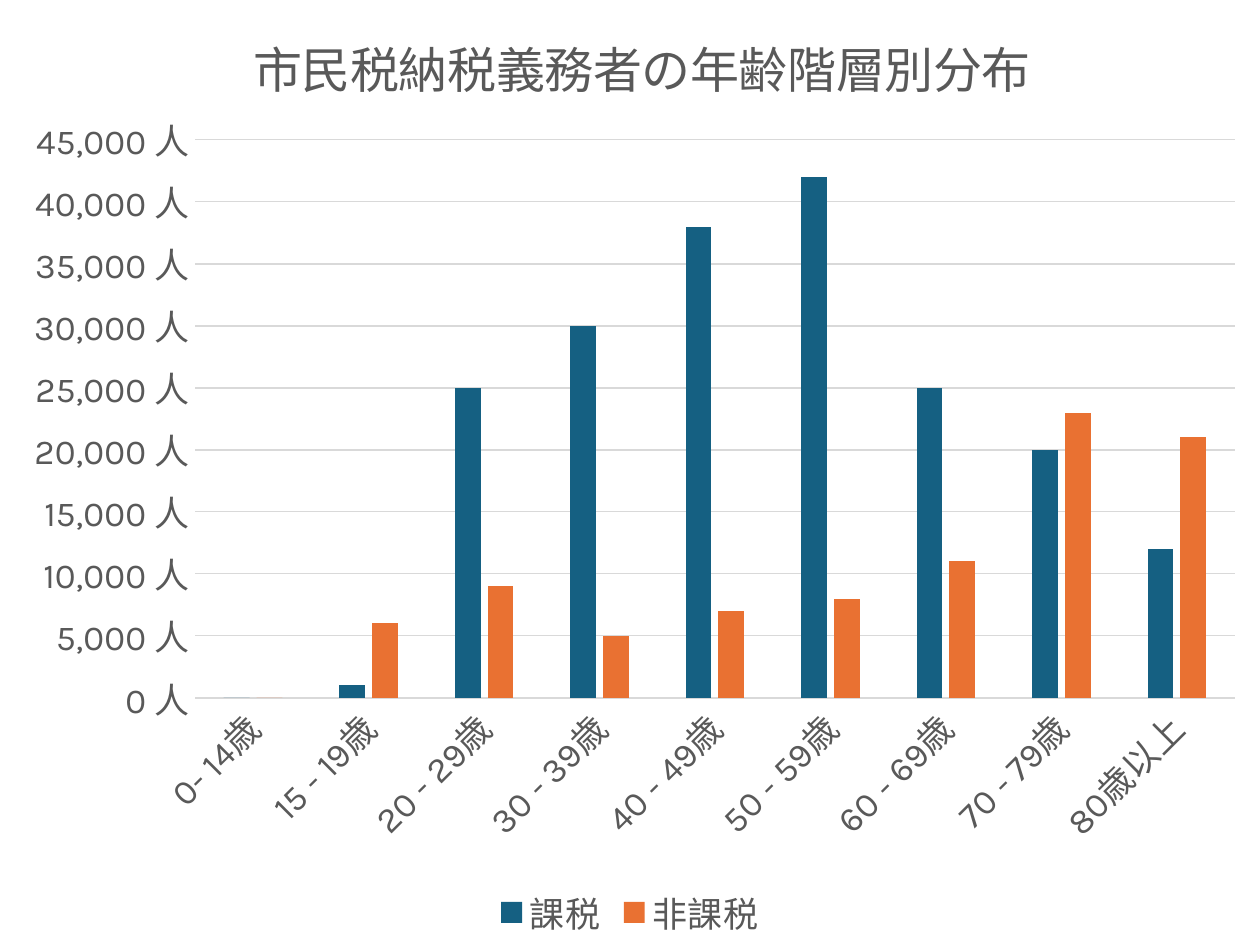
from lxml import etree
from pptx import Presentation
from pptx.chart.data import CategoryChartData as Data
from pptx.dml.color import RGBColor as RGB
from pptx.enum.chart import XL_CHART_TYPE as Kind
from pptx.enum.chart import XL_LEGEND_POSITION as Side
from pptx.enum.chart import XL_TICK_MARK as Tick
from pptx.oxml.ns import qn
from pptx.util import Inches, Pt

# Content
TITLE = "市民税納税義務者の年齢階層別分布"
AGES = ["0- 14歳", "15 - 19歳", "20 - 29歳", "30 - 39歳", "40 - 49歳",
        "50 - 59歳", "60 - 69歳", "70 - 79歳", "80歳以上"]
TAX = [
    ("課税", [0, 1000, 25000, 30000, 38000, 42000, 25000, 20000, 12000], "blue"),
    ("非課税", [0, 6000, 9000, 5000, 7000, 8000, 11000, 23000, 21000], "orange"),
]
UNIT = '#,##0_ "人"'

# Theme and format values
THEME = {
    "font": "Karla", "title": 28, "label": 20, "line": 0.75,
    "text": RGB.from_string("595959"), "grid": RGB.from_string("D9D9D9"),
    "blue": RGB.from_string("156082"), "orange": RGB.from_string("E97132"),
}
WIDE, HIGH = 10, 7.61
HEAD = {"x": 1.94, "y": 0.25}
AREA = {"x": 1.55, "y": 1.22, "w": 8.25, "h": 4.43}
SCALE = {"minimum_scale": 0, "maximum_scale": 45000, "major_unit": 5000,
         "has_major_gridlines": True}
TICKS = {"major_tick_mark": Tick.NONE, "minor_tick_mark": Tick.NONE}
BARS = {"gap_width": 219, "overlap": -27, "vary_by_categories": False}
KEY = {"position": Side.BOTTOM, "include_in_layout": False}


def put(part, vals):
    for name, val in vals.items():
        setattr(part, name, val)


def ink(font, size):
    put(font, {"name": THEME["font"], "size": Pt(size), "bold": False})
    font.color.rgb = THEME["text"]


def rule(line):
    line.color.rgb = THEME["grid"]
    line.width = Pt(THEME["line"])


def place(part, box, spot, modes):
    """Fix a chart part at a box given in inches within the chart."""
    for old in part.findall(qn("c:layout")):
        part.remove(old)
    layout = etree.Element(qn("c:layout"))
    part.insert(spot, layout)
    man = etree.SubElement(layout, qn("c:manualLayout"))
    for tag in modes:
        etree.SubElement(man, qn("c:" + tag)).set("val", modes[tag])
    for tag, val in box.items():
        full = WIDE if tag in "xw" else HIGH
        etree.SubElement(man, qn("c:" + tag)).set("val", str(val / full))


def main():
    deck = Presentation()
    put(deck, {"slide_width": Inches(10), "slide_height": Inches(7.5)})
    slide = deck.slides.add_slide(deck.slide_layouts[6])

    # Chart
    data = Data(number_format=UNIT)
    data.categories = AGES
    for name, vals, _ in TAX:
        data.add_series(name, vals)
    chart = slide.shapes.add_chart(
        Kind.COLUMN_CLUSTERED, Inches(0), Inches(-0.11),
        Inches(WIDE), Inches(HIGH), data).chart
    ink(chart.font, THEME["label"])
    plot = chart.plots[0]
    edge = {"xMode": "edge", "yMode": "edge"}
    place(plot._element.getparent(), AREA, 0, {"layoutTarget": "inner", **edge})

    # Title
    chart.has_title = True
    head = chart.chart_title
    head.include_in_layout = False
    run = head.text_frame.paragraphs[0].add_run()
    run.text = TITLE
    ink(run.font, THEME["title"])
    place(head._element, HEAD, 1, edge)

    # Columns
    put(plot, BARS)
    for bar, (_, _, tone) in zip(plot.series, TAX):
        bar.invert_if_negative = False
        bar.format.fill.solid()
        bar.format.fill.fore_color.rgb = THEME[tone]

    # Axes
    ages, count = chart.category_axis, chart.value_axis
    for axis in (ages, count):
        put(axis, TICKS)
        ink(axis.tick_labels.font, THEME["label"])
    rule(ages.format.line)
    body = ages._element.find(qn("c:txPr")).find(qn("a:bodyPr"))
    body.set("rot", str(-45 * 60000))
    put(count, SCALE)
    put(count.tick_labels, {"number_format": UNIT,
                            "number_format_is_linked": False})
    count.format.line.fill.background()
    rule(count.major_gridlines.format.line)

    # Legend
    chart.has_legend = True
    put(chart.legend, KEY)
    ink(chart.legend.font, THEME["label"])

    deck.save("out.pptx")


if __name__ == "__main__":
    main()
